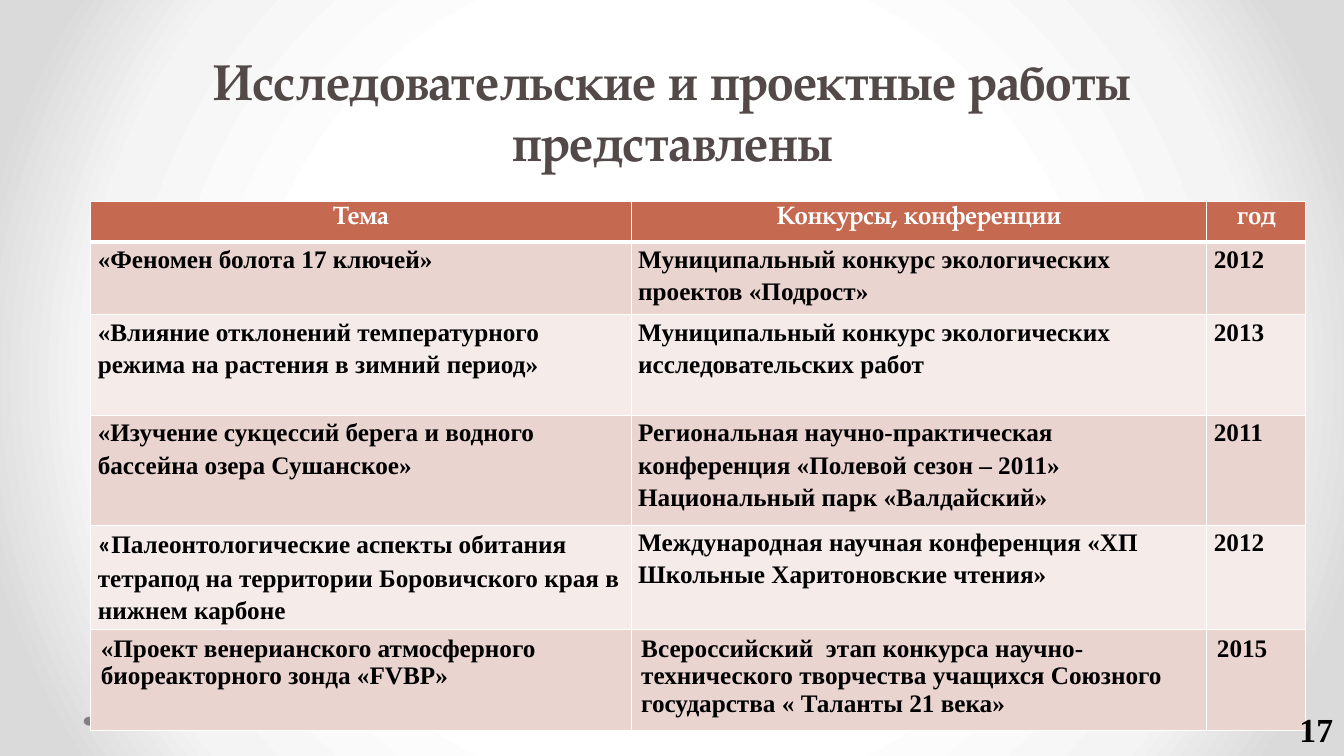
from lxml import etree
from pptx import Presentation
from pptx.dml.color import RGBColor
from pptx.enum.shapes import MSO_SHAPE
from pptx.enum.text import MSO_ANCHOR, MSO_AUTO_SIZE, PP_ALIGN
from pptx.oxml import parse_xml
from pptx.oxml.ns import qn
from pptx.util import Inches, Pt

OVAL = MSO_SHAPE.OVAL
BOTTOM = MSO_ANCHOR.BOTTOM
CENTER, LEFT = PP_ALIGN.CENTER, PP_ALIGN.LEFT
FIT_SHAPE = MSO_AUTO_SIZE.SHAPE_TO_FIT_TEXT
NAMESPACE = "http://schemas.openxmlformats.org/drawingml/2006/main"

THEME = {
    "title": {"name": "TeX Gyre Pagella", "size": Pt(36), "bold": True, "color": "534949"},
    "header": {"name": "TeX Gyre Pagella", "size": Pt(18), "bold": True, "color": "FFFFFF"},
    "body": {"name": "Times New Roman", "size": Pt(18), "bold": True, "color": "000000"},
    "quote": {"name": "Calibri", "size": Pt(18), "bold": True, "color": "000000"},
    "number": {"name": "Times New Roman", "size": Pt(24), "bold": True, "color": "000000"},
    "header_fill": "C66951",
    "bands": ["EAD4D0", "F5EBE9"],
    "border": "FFFFFF",
    "dot": "808080",
    "backdrop": [(50, "FFFFFF"), (76, "F4F4F4"), (92, "DADADA")],
}

COLUMNS = [5.36, 5.71, 0.98]
ROWS = [0.4, 0.72, 1, 1.09, 1, 0.93]
HEADINGS = ["Тема", "Конкурсы, конференции", "год"]
WORKS = [
    ("«Феномен болота 17 ключей»",
     "Муниципальный конкурс экологических проектов «Подрост»", "2012"),
    ("«Влияние отклонений температурного режима на растения в зимний период»",
     "Муниципальный конкурс экологических исследовательских работ", "2013"),
    ("«Изучение сукцессий берега и водного бассейна озера Сушанское»",
     "Региональная научно-практическая конференция «Полевой сезон – 2011» "
     "Национальный парк «Валдайский»", "2011"),
    ("«Палеонтологические аспекты обитания тетрапод на территории Боровичского края "
     "в нижнем карбоне",
     "Международная научная конференция «ХП Школьные Харитоновские чтения»", "2012"),
    ("«Проект венерианского атмосферного биореакторного зонда «FVBP»",
     "Всероссийский  этап конкурса научно- технического творчества учащихся Союзного "
     "государства « Таланты 21 века»", "2015"),
]


def write(para, words, style):
    span = para.add_run()
    span.text = words
    for key, value in THEME[style].items():
        if key == "color":
            span.font.color.rgb = RGBColor.from_string(value)
        else:
            setattr(span.font, key, value)


def add_border(cell, side, points):
    line = etree.SubElement(cell._tc.get_or_add_tcPr(), qn(f"a:ln{side}"), w=str(Pt(points)))
    fill = etree.SubElement(line, qn("a:solidFill"))
    etree.SubElement(fill, qn("a:srgbClr"), val=THEME["border"])


deck = Presentation()
deck.slide_width, deck.slide_height = Inches(13.33), Inches(7.5)
page = deck.slides.add_slide(deck.slide_layouts[6])

page.background.fill.solid()
backdrop = page.element.find(".//" + qn("p:bgPr"))
stops = "".join(
    f'<a:gs pos="{position * 1000}"><a:srgbClr val="{color}"/></a:gs>'
    for position, color in THEME["backdrop"]
)
gradient = parse_xml(
    f'<a:gradFill xmlns:a="{NAMESPACE}" rotWithShape="1"><a:gsLst>{stops}</a:gsLst>'
    '<a:path path="circle"><a:fillToRect l="50000" t="50000" r="50000" b="50000"/></a:path>'
    "</a:gradFill>"
)
backdrop.replace(backdrop.find(qn("a:solidFill")), gradient)

for left in (12.33, 0.83):
    dot = page.shapes.add_shape(OVAL, Inches(left), Inches(7.11), Inches(0.12), Inches(0.09))
    dot.shadow.inherit = False
    dot.fill.solid()
    dot.fill.fore_color.rgb = RGBColor.from_string(THEME["dot"])
    dot.line.fill.background()

title = page.shapes.add_textbox(Inches(0.67), 0, Inches(12), Inches(1.75)).text_frame
title.word_wrap = True
title.vertical_anchor = BOTTOM
title.paragraphs[0].alignment = CENTER
write(title.paragraphs[0], "Исследовательские и проектные работы представлены", "title")

table = page.shapes.add_table(
    len(ROWS), len(COLUMNS), Inches(0.9), Inches(2), Inches(sum(COLUMNS)), Inches(sum(ROWS))
).table
table.horz_banding = False
for column, width in zip(table.columns, COLUMNS):
    column.width = Inches(width)
for row, height in zip(table.rows, ROWS):
    row.height = Inches(height)

tight_cell = {
    "margin_left": Inches(0.07), "margin_right": Inches(0.07),
    "margin_top": 0, "margin_bottom": 0,
}
loose_para = {"line_spacing": 1.15, "space_after": Pt(10)}

for row_index, texts in enumerate([HEADINGS, *WORKS]):
    is_header = row_index == 0
    is_last = row_index == len(WORKS)
    color = THEME["header_fill"] if is_header else THEME["bands"][(row_index - 1) % 2]
    for column_index, words in enumerate(texts):
        cell = table.cell(row_index, column_index)
        para = cell.text_frame.paragraphs[0]
        para.alignment = CENTER if is_header else LEFT
        if not is_header and not is_last:
            for key, value in tight_cell.items():
                setattr(cell, key, value)
            for key, value in loose_para.items():
                setattr(para, key, value)
        for side in "LRTB":
            header_edge = (row_index, side) in ((0, "B"), (1, "T"))
            add_border(cell, side, 3 if header_edge else 1)
        cell.fill.solid()
        cell.fill.fore_color.rgb = RGBColor.from_string(color)
        if words.startswith("«Палеонтологические"):
            write(para, words[0], "quote")
            words = words[1:]
        write(para, words, "header" if is_header else "body")

number = page.shapes.add_textbox(
    Inches(12.79), Inches(6.98), Inches(0.54), Inches(0.5)
).text_frame
number.word_wrap = False
number.auto_size = FIT_SHAPE
write(number.paragraphs[0], "17", "number")

deck.save("out.pptx")
